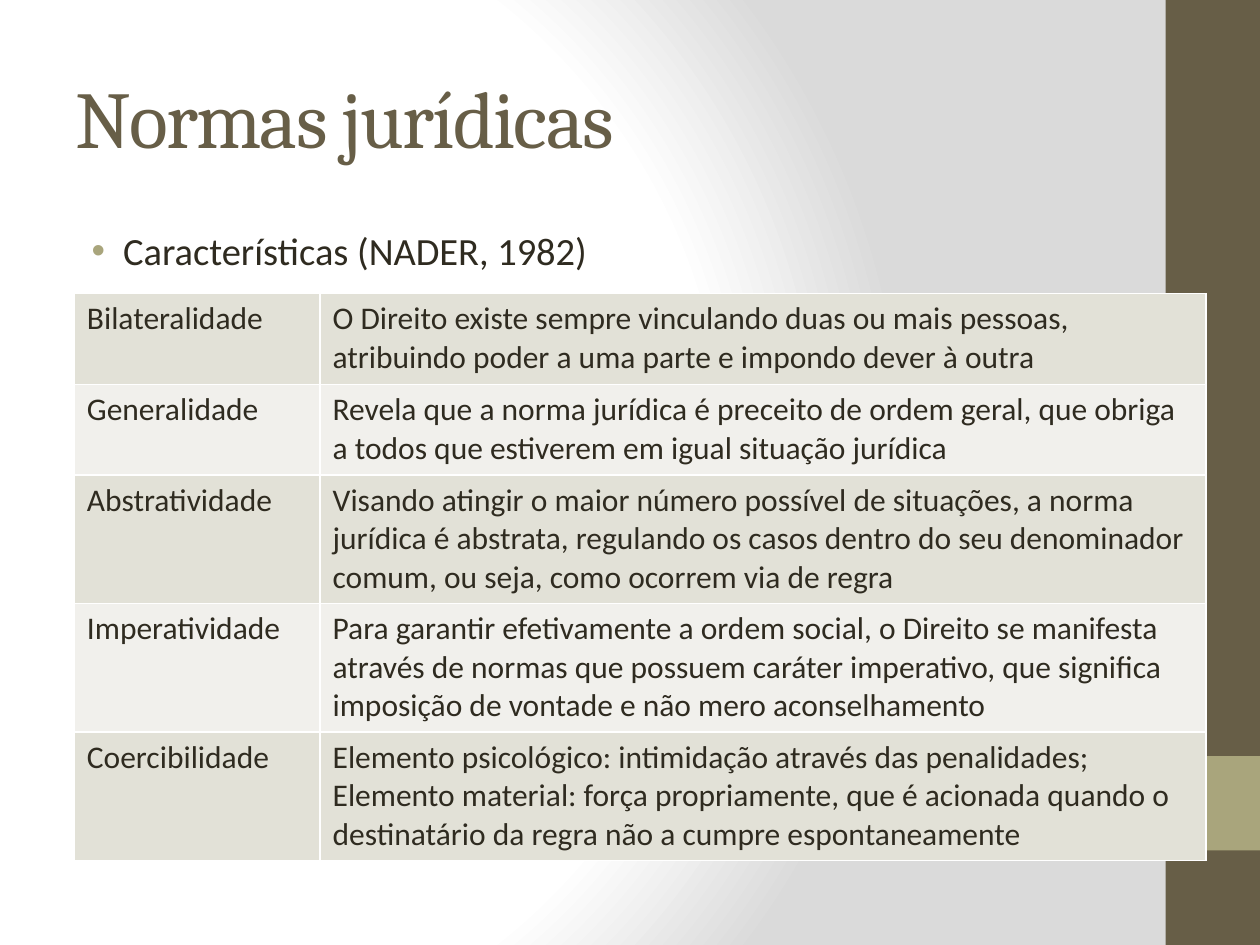
"""Build a slide that lists the characteristics of legal norms in a table."""
from lxml import etree
from pptx import Presentation
from pptx.dml.color import RGBColor
from pptx.enum.shapes import MSO_SHAPE
from pptx.enum.text import MSO_ANCHOR
from pptx.oxml import parse_xml
from pptx.oxml.ns import nsdecls, qn
from pptx.util import Inches, Pt

TITLE = "Normas jurídicas"
SUBTITLE = "Características (NADER, 1982)"
CHARACTERISTICS = [
    ("Bilateralidade", "O Direito existe sempre vinculando duas ou mais pessoas, "
     "atribuindo poder a uma parte e impondo dever à outra", 2),
    ("Generalidade", "Revela que a norma jurídica é preceito de ordem geral, que obriga "
     "a todos que estiverem em igual situação jurídica", 2),
    ("Abstratividade", "Visando atingir o maior número possível de situações, a norma "
     "jurídica é abstrata, regulando os casos dentro do seu denominador "
     "comum, ou seja, como ocorrem via de regra", 3),
    ("Imperatividade", "Para garantir efetivamente a ordem social, o Direito se manifesta "
     "através de normas que possuem caráter imperativo, que significa "
     "imposição de vontade e não mero aconselhamento", 3),
    ("Coercibilidade", "Elemento psicológico: intimidação através das penalidades; "
     "Elemento material: força propriamente, que é acionada quando o "
     "destinatário da regra não a cumpre espontaneamente", 3),
]

BROWN = RGBColor(0x67, 0x5E, 0x47)
OLIVE = RGBColor(0xA9, 0xA5, 0x7C)
INK = RGBColor(0x2F, 0x2B, 0x20)
WHITE = RGBColor(0xFF, 0xFF, 0xFF)
GREY = RGBColor(0xDA, 0xDA, 0xDA)
BANDS = (RGBColor(0xE2, 0xE1, 0xD7), RGBColor(0xF1, 0xF0, 0xEC))

WIDTH, HEIGHT = 10, 7.5
BAR_WIDTH = 0.1 * HEIGHT
BAR_LEFT = WIDTH - BAR_WIDTH
TEXT_LEFT, TEXT_WIDTH = 0.5, 8.33
TABLE_LEFT, TABLE_TOP = 0.59, 2.33
COLUMN_WIDTHS = (1.95, 7.03)
LINE_HEIGHT, ROW_PADDING = 0.3, 0.12

TITLE_FONT = {"name": "Cambria", "size": Pt(46)}
BODY_FONT = {"name": "Calibri", "size": Pt(22)}
CELL_FONT = {"name": "Calibri", "size": Pt(18)}


def paint_background(slide):
    slide.background.fill.gradient()
    gradient = next(slide.element.iter(qn("a:gradFill")))
    stops = "".join(
        f'<a:gs pos="{share * 1000}"><a:srgbClr val="{color}"/></a:gs>'
        for share, color in ((0, WHITE), (75, WHITE), (100, GREY)))
    gradient.getparent().replace(gradient, parse_xml(
        f'<a:gradFill {nsdecls("a")} rotWithShape="1"><a:gsLst>{stops}</a:gsLst>'
        '<a:path path="circle"><a:fillToRect l="20000" t="50000" r="100000" b="50000"/>'
        '</a:path></a:gradFill>'))


def add_bar(slide, top, height, color):
    shape = slide.shapes.add_shape(
        MSO_SHAPE.RECTANGLE, *map(Inches, (BAR_LEFT, top, BAR_WIDTH, height)))
    shape.shadow.inherit = False
    shape.fill.solid()
    shape.fill.fore_color.rgb = color
    shape.line.fill.background()


def write(text_frame, text, font, color):
    paragraph = text_frame.paragraphs[0]
    run = paragraph.add_run()
    run.text = text
    for name, value in font.items():
        setattr(run.font, name, value)
    run.font.color.rgb = color
    return paragraph


def add_text(slide, top, height, text, font, color, anchor):
    text_box = slide.shapes.add_textbox(
        *map(Inches, (TEXT_LEFT, top, TEXT_WIDTH, height)))
    text_box.text_frame.word_wrap = True
    text_box.text_frame.vertical_anchor = anchor
    return write(text_box.text_frame, text, font, color)


def add_bullet(paragraph):
    paragraph.space_before = Pt(0.2 * paragraph.runs[0].font.size.pt)
    settings = paragraph._p.get_or_add_pPr()
    settings.set("marL", str(Inches(0.38)))
    settings.set("indent", str(Inches(-0.25)))
    color = etree.SubElement(settings, qn("a:buClr"))
    etree.SubElement(color, qn("a:srgbClr"), val=str(OLIVE))
    etree.SubElement(settings, qn("a:buFont"), typeface="Arial")
    etree.SubElement(settings, qn("a:buChar"), char="•")


def add_borders(cell):
    settings = cell._tc.get_or_add_tcPr()
    for position, side in enumerate(("lnL", "lnR", "lnT", "lnB")):
        settings.insert(position, parse_xml(
            f'<a:{side} {nsdecls("a")} w="{Pt(1)}"><a:solidFill>'
            f'<a:srgbClr val="{WHITE}"/></a:solidFill></a:{side}>'))


def add_characteristics_table(slide):
    heights = [lines * LINE_HEIGHT + ROW_PADDING for *_, lines in CHARACTERISTICS]
    table = slide.shapes.add_table(
        len(heights), len(COLUMN_WIDTHS),
        *map(Inches, (TABLE_LEFT, TABLE_TOP, sum(COLUMN_WIDTHS), sum(heights)))).table
    table.first_row = False
    for column, width in zip(table.columns, COLUMN_WIDTHS):
        column.width = Inches(width)
    for index, (*texts, _) in enumerate(CHARACTERISTICS):
        row = table.rows[index]
        row.height = Inches(heights[index])
        for cell, text in zip(row.cells, texts):
            write(cell.text_frame, text, CELL_FONT, INK)
            cell.fill.solid()
            cell.fill.fore_color.rgb = BANDS[index % 2]
            add_borders(cell)


def main():
    presentation = Presentation()
    presentation.slide_width, presentation.slide_height = Inches(WIDTH), Inches(HEIGHT)
    slide = presentation.slides.add_slide(presentation.slide_layouts[6])
    paint_background(slide)
    add_bar(slide, 0, HEIGHT, BROWN)
    add_bar(slide, 0.8 * HEIGHT, BAR_WIDTH, OLIVE)
    title = add_text(slide, 0.3, 1.25, TITLE, TITLE_FONT, BROWN, MSO_ANCHOR.MIDDLE)
    title.runs[0]._r.get_or_add_rPr().set("spc", "-100")
    add_bullet(add_text(slide, 1.75, 5.25, SUBTITLE, BODY_FONT, INK, MSO_ANCHOR.TOP))
    add_characteristics_table(slide)
    presentation.save("out.pptx")


if __name__ == "__main__":
    main()
